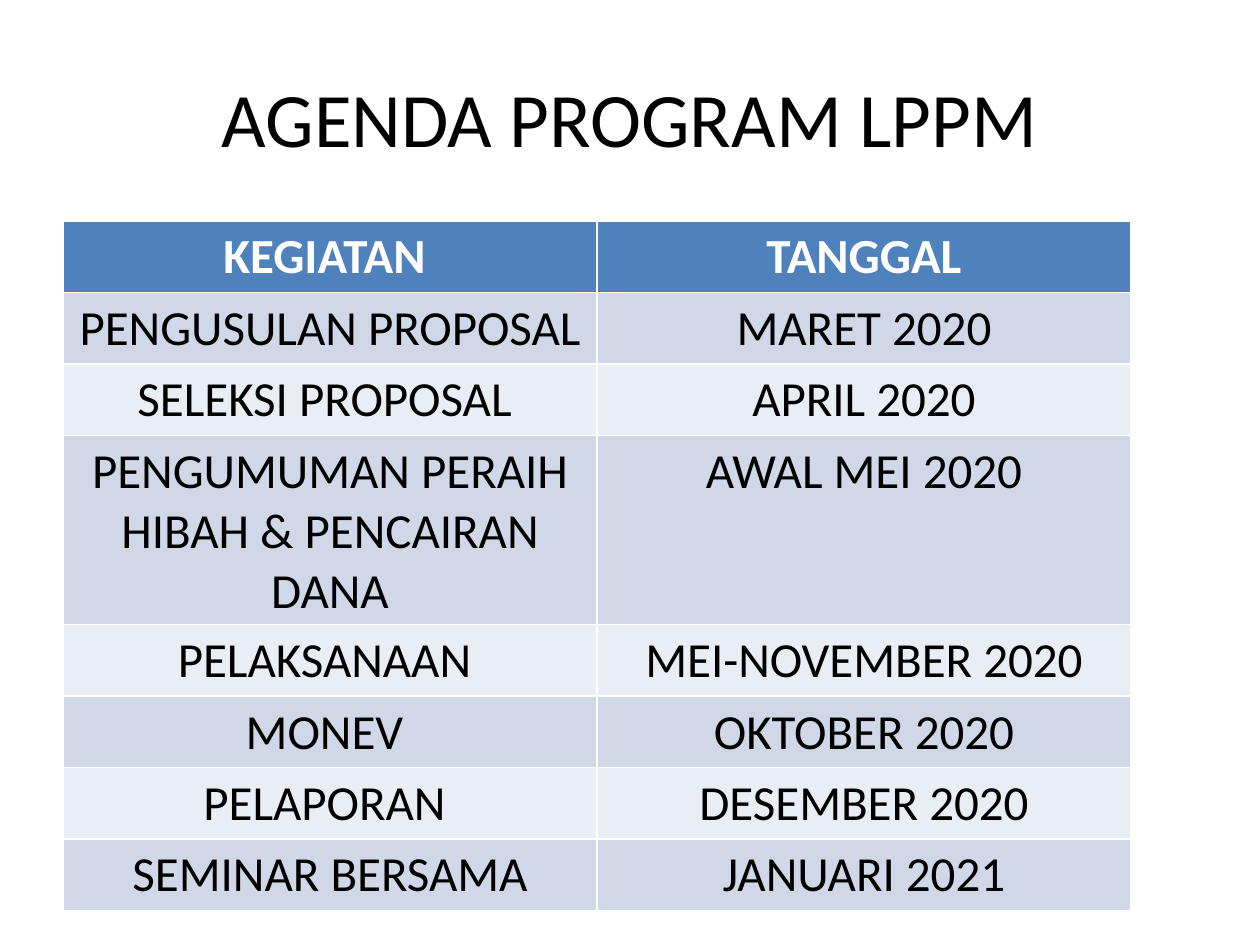
from pptx import Presentation
from pptx.dml.color import RGBColor
from pptx.enum.text import MSO_ANCHOR, PP_ALIGN
from pptx.util import Emu, Pt

CENTER = PP_ALIGN.CENTER
MIDDLE = MSO_ANCHOR.MIDDLE
BLACK = RGBColor(0x00, 0x00, 0x00)
WHITE = RGBColor(0xFF, 0xFF, 0xFF)
HEADER_BLUE = RGBColor(0x4F, 0x81, 0xBD)
BAND_DARK = RGBColor(0xD0, 0xD8, 0xE8)
BAND_LIGHT = RGBColor(0xE9, 0xED, 0xF4)

PX = 914400 // 126
BLANK_LAYOUT = 6
ROW_HEIGHT = 52

AGENDA = [
    ("KEGIATAN ", "TANGGAL"),
    ("PENGUSULAN PROPOSAL", "MARET 2020"),
    ("SELEKSI PROPOSAL ", "APRIL 2020"),
    ("PENGUMUMAN PERAIH HIBAH & PENCAIRAN DANA", "AWAL MEI 2020"),
    ("PELAKSANAAN ", "MEI-NOVEMBER 2020"),
    ("MONEV ", "OKTOBER 2020"),
    ("PELAPORAN ", "DESEMBER 2020"),
    ("SEMINAR BERSAMA", "JANUARI 2021"),
]


def px(*lengths):
    return [Emu(length * PX) for length in lengths]


class AgendaPage:
    font_name = "Calibri"
    title_size = Pt(44)
    table_size = Pt(28)

    def __init__(self, deck):
        self.page = deck.slides.add_slide(deck.slide_layouts[BLANK_LAYOUT])

    def set_text(self, frame, text, size, color, bold=False):
        frame.word_wrap = True
        para = frame.paragraphs[0]
        para.text = text
        para.alignment = CENTER
        para.font.name = self.font_name
        para.font.size = size
        para.font.bold = bold
        para.font.color.rgb = color

    def title(self, text, left, top, width, height):
        box = self.page.shapes.add_textbox(*px(left, top, width, height))
        box.text_frame.vertical_anchor = MIDDLE
        self.set_text(box.text_frame, text, self.title_size, BLACK)

    def table(self, rows, left, top, width):
        place = px(left, top, width, ROW_HEIGHT * len(rows))
        table = self.page.shapes.add_table(len(rows), len(rows[0]), *place).table
        for row_index, texts in enumerate(rows):
            header = row_index == 0
            band = BAND_DARK if row_index % 2 else BAND_LIGHT
            for column_index, text in enumerate(texts):
                cell = table.cell(row_index, column_index)
                cell.fill.solid()
                cell.fill.fore_color.rgb = HEADER_BLUE if header else band
                color = WHITE if header else BLACK
                self.set_text(cell.text_frame, text, self.table_size, color, header)


def main():
    deck = Presentation()
    deck.slide_width, deck.slide_height = px(1260, 945)
    agenda = AgendaPage(deck)
    agenda.title("AGENDA PROGRAM LPPM", 63, 38, 1134, 158)
    agenda.table(AGENDA, 63, 221, 1068)
    deck.save("out.pptx")


if __name__ == "__main__":
    main()
